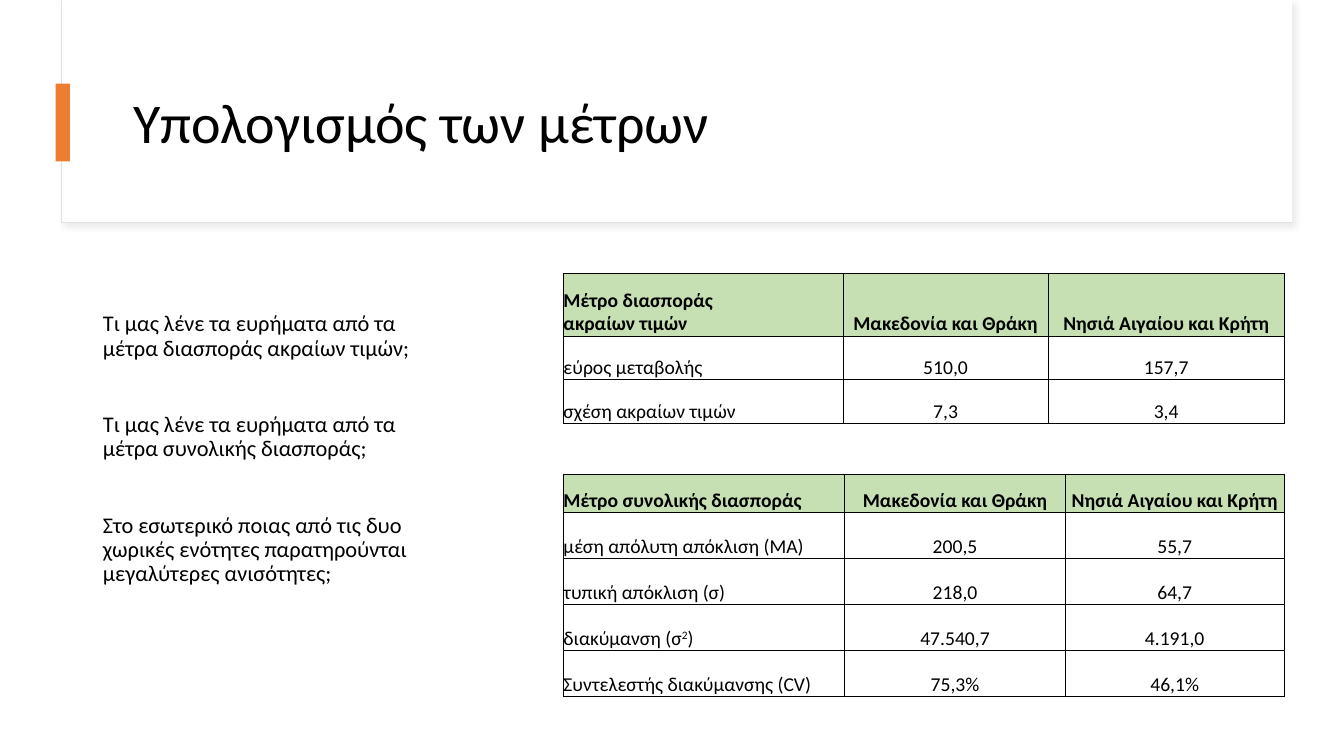
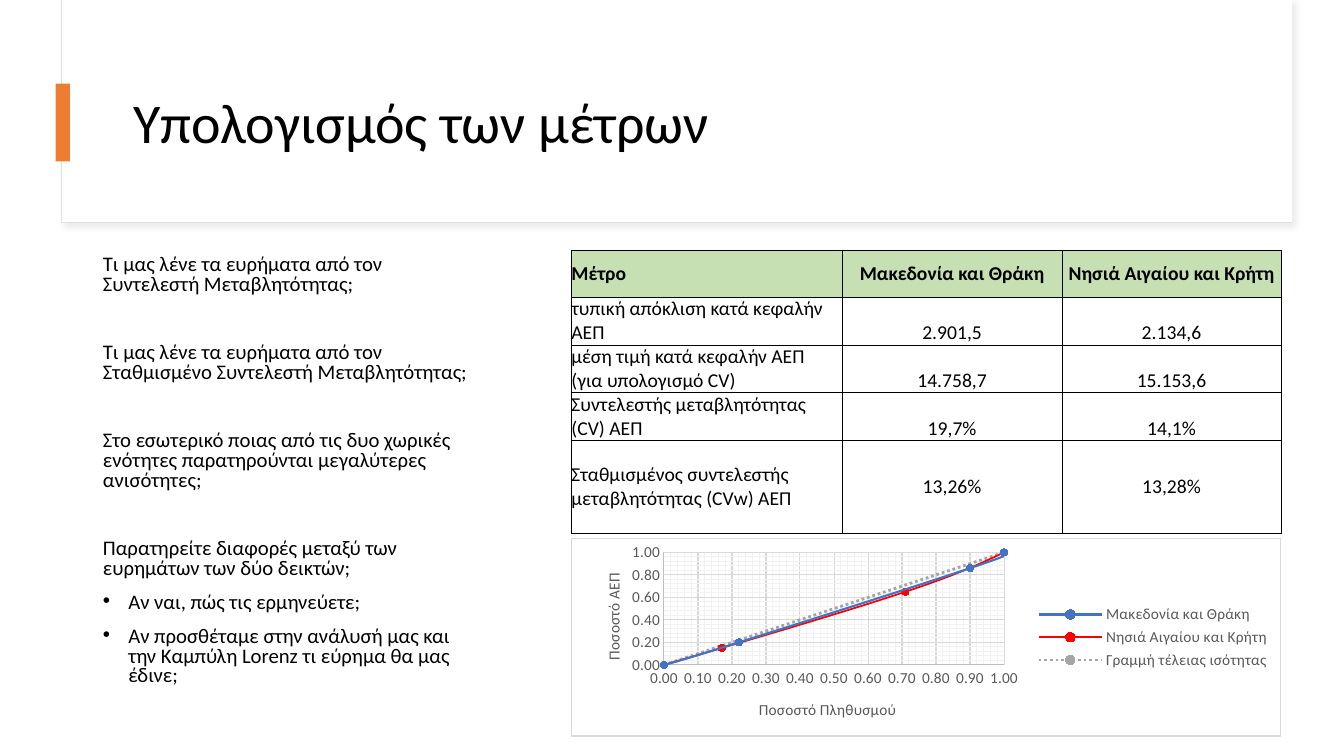
"""Build two slides on measures of dispersion."""
from pptx import Presentation
from pptx.chart.data import XyChartData
from pptx.dml.color import RGBColor
from pptx.enum.chart import (XL_CHART_TYPE, XL_LEGEND_POSITION,
                             XL_MARKER_STYLE, XL_TICK_MARK)
from pptx.enum.dml import MSO_LINE
from pptx.enum.shapes import MSO_SHAPE
from pptx.enum.text import MSO_ANCHOR, MSO_AUTO_SIZE, PP_ALIGN
from pptx.oxml import parse_xml
from pptx.oxml.ns import nsdecls, qn
from pptx.util import Cm, Pt

BLACK, WHITE, GREEN, ORANGE = "000000", "FFFFFF", "C6E0B4", "ED7D31"
GRAY, GRID, FAINT, EDGE = "595959", "D9D9D9", "F2F2F2", "BFBFBF"
NORTH, ISLES = "Μακεδονία και Θράκη", "Νησιά Αιγαίου και Κρήτη"


def hue(code):
    return RGBColor.from_string(code)


def xml(tag, inner, *names):
    head, rest = (tag.split(" ", 1) + [""])[:2]
    return parse_xml(f"<{head} {nsdecls(*names)} {rest}>{inner}</{head}>")


def paint(code):
    return f'<a:solidFill><a:srgbClr val="{code}"/></a:solidFill>'


def rule(code):
    return f'<a:ln w="{Pt(0.75)}">{paint(code)}</a:ln>'


def stroke(line, code, width, dash=None):
    line.color.rgb = hue(code)
    line.width = Pt(width)
    if dash:
        line.dash_style = dash


def place(node, spot, **parts):
    for old in node.findall(qn("c:layout")):
        node.remove(old)
    inner = "".join(f'<c:{k} val="{v}"/>' for k, v in parts.items())
    node.insert(spot, xml("c:layout", f"<c:manualLayout>{inner}</c:manualLayout>", "c"))


class Deck:
    """Hold the style and the current slide."""

    def __init__(self):
        self.file = Presentation()
        self.file.slide_width, self.file.slide_height = Cm(33.87), Cm(19.05)
        self.face = "Calibri"

    def font(self, font, size, code=BLACK, bold=False):
        font.name, font.size, font.bold = self.face, Pt(size), bold
        font.color.rgb = hue(code)

    def run(self, par, text, size, bold=False):
        run = par.add_run()
        run.text = text
        self.font(run.font, size, bold=bold)
        return run

    def box(self, area, fill, line=None):
        shape = self.slide.shapes.add_shape(MSO_SHAPE.RECTANGLE, *map(Cm, area))
        shape.shadow.inherit = False
        shape.fill.solid()
        shape.fill.fore_color.rgb = hue(fill)
        if line:
            stroke(shape.line, line, 0.75)
        else:
            shape.line.fill.background()
        return shape

    def shade(self, shape):
        tint = f'<a:srgbClr val="{GRID}"><a:alpha val="50000"/></a:srgbClr>'
        tag = f'a:outerShdw blurRad="{Pt(4)}" dist="{Pt(3)}" dir="2700000"'
        node = shape.element.spPr.find(qn("a:effectLst"))
        node.append(xml(tag, tint, "a"))

    def holder(self, shape, area, anchor):
        shape.left, shape.top, shape.width, shape.height = map(Cm, area)
        shape.element.getparent().append(shape.element)
        frame = shape.text_frame
        frame.word_wrap, frame.auto_size = True, MSO_AUTO_SIZE.NONE
        frame.vertical_anchor = anchor
        return frame

    def page(self, title):
        self.slide = self.file.slides.add_slide(self.file.slide_layouts[1])
        self.shade(self.box((1.55, 0, 31.01, 5.61), WHITE, "E1E1E1"))
        self.box((1.57, 0, 30.99, 5.59), WHITE)
        frame = self.holder(self.slide.shapes.title, (3.1, 1.52, 28.24, 3.28),
                            MSO_ANCHOR.MIDDLE)
        par = frame.paragraphs[0]
        par.alignment, par.line_spacing = PP_ALIGN.LEFT, 0.9
        self.run(par, title, 40)
        self.box((1.4, 2.11, 0.36, 1.96), ORANGE)

    def body(self, area, size, pitch, gap, asks, points=()):
        frame = self.holder(self.slide.placeholders[1], area, MSO_ANCHOR.TOP)
        for i, text in enumerate([*asks, *points]):
            par = frame.paragraphs[0] if i == 0 else frame.add_paragraph()
            point = i >= len(asks)
            par.line_spacing = pitch
            par.space_before = Pt(10 if point or i == 0 else gap)
            par.alignment = PP_ALIGN.LEFT
            self.run(par, text, size)
            props = par._p.get_or_add_pPr()
            props.set("marL", str(Cm(0.64) if point else 0))
            props.set("indent", str(Cm(-0.64) if point else 0))
            if point:
                props.append(xml('a:buFont typeface="Arial"', "", "a"))
                props.append(xml('a:buChar char="•"', "", "a"))
            else:
                props.append(xml("a:buNone", "", "a"))

    def cell(self, cell, text, head, first, anchor):
        cell.margin_left = cell.margin_right = 0
        cell.margin_top = cell.margin_bottom = 0
        cell.vertical_anchor = anchor
        if head:
            cell.fill.solid()
            cell.fill.fore_color.rgb = hue(GREEN)
        else:
            cell.fill.background()
        for i, line in enumerate(text.split("\n")):
            frame = cell.text_frame
            par = frame.paragraphs[0] if i == 0 else frame.add_paragraph()
            par.alignment = PP_ALIGN.LEFT if first else PP_ALIGN.CENTER
            for k, part in enumerate(line.split("^")):
                run = self.run(par, part, 14, head)
                if k % 2:
                    run.font._element.set("baseline", "30000")
        props = cell._tc.get_or_add_tcPr()
        for i, side in enumerate("LRTB"):
            props.insert(i, xml(f'a:ln{side} w="{Pt(0.5)}"', paint(BLACK), "a"))

    def table(self, left, top, cols, rows, data, middle=lambda r, c: False):
        shape = self.slide.shapes.add_table(
            len(rows), len(cols), Cm(left), Cm(top), Cm(sum(cols)), Cm(sum(rows)))
        table = shape.table
        table.first_row = table.horz_banding = False
        for col, width in zip(table.columns, cols):
            col.width = Cm(width)
        for row, height in zip(table.rows, rows):
            row.height = Cm(height)
        for r, line in enumerate(data):
            for c, text in enumerate(line):
                anchor = MSO_ANCHOR.MIDDLE if middle(r, c) else MSO_ANCHOR.BOTTOM
                self.cell(table.cell(r, c), text, r == 0, c == 0, anchor)

    def axis(self, axis, title, step, x, y):
        axis.minimum_scale, axis.maximum_scale, axis.major_unit = 0, 1, step
        axis.major_tick_mark = axis.minor_tick_mark = XL_TICK_MARK.NONE
        axis.has_major_gridlines = axis.has_minor_gridlines = True
        stroke(axis.major_gridlines.format.line, GRID, 0.75)
        minor = axis._element.find(qn("c:minorGridlines"))
        minor.append(xml("c:spPr", rule(FAINT), "c", "a"))
        stroke(axis.format.line, EDGE, 0.75)
        labels = axis.tick_labels
        labels.number_format, labels.number_format_is_linked = "0.00", False
        self.font(labels.font, 11, GRAY)
        name = axis.axis_title
        run = name.text_frame.paragraphs[0].add_run()
        run.text = title
        self.font(run.font, 11, GRAY)
        place(name._element, 1, xMode="edge", yMode="edge", x=x, y=y)

    def chart(self, area, lines):
        data = XyChartData()
        for name, dots, *_ in lines:
            series = data.add_series(name)
            for x, y in dots:
                series.add_data_point(x, y)
        chart = self.slide.shapes.add_chart(
            XL_CHART_TYPE.XY_SCATTER_SMOOTH, *map(Cm, area), data).chart
        chart.has_title = False
        self.font(chart.font, 11)
        space = chart._chartSpace
        space.find(qn("c:txPr")).addprevious(
            xml("c:spPr", paint(WHITE) + rule(GRID), "c", "a"))
        place(space.find(qn("c:chart")).find(qn("c:plotArea")), 0,
              layoutTarget="inner", xMode="edge", yMode="edge",
              x=0.13, y=0.07, w=0.48, h=0.57)
        self.axis(chart.category_axis, "Ποσοστό Πληθυσμού", 0.1, 0.26, 0.8)
        self.axis(chart.value_axis, "Ποσοστό ΑΕΠ", 0.2, 0.04, 0.16)
        chart.has_legend = True
        chart.legend.position = XL_LEGEND_POSITION.RIGHT
        chart.legend.include_in_layout = False
        self.font(chart.legend.font, 11, GRAY)
        plot = chart.plots[0]
        plot.vary_by_categories = False
        for series, (_, _, code, width, dash) in zip(plot.series, lines):
            stroke(series.format.line, code, width, dash)
            mark = series.marker
            mark.style, mark.size = XL_MARKER_STYLE.CIRCLE, 5
            mark.format.fill.solid()
            mark.format.fill.fore_color.rgb = hue(code)
            stroke(mark.format.line, code, 0.75)
            series._element.find(qn("c:smooth")).set("val", "1")


def main():
    deck = Deck()
    title = "Υπολογισμός των μέτρων"
    deck.page(title)
    deck.table(14.2, 6.88, (7.04, 5.18, 5.94), (1.59, 1.1, 1.1), [
        ("Μέτρο διασποράς\nακραίων τιμών", NORTH, ISLES),
        ("εύρος μεταβολής", "510,0", "157,7"),
        ("σχέση ακραίων τιμών", "7,3", "3,4")])
    deck.table(14.2, 11.94, (7.09, 5.56, 5.51), [0.97] + [1.16] * 4, [
        ("Μέτρο συνολικής διασποράς", NORTH, ISLES),
        ("μέση απόλυτη απόκλιση (ΜΑ)", "200,5", "55,7"),
        ("τυπική απόκλιση (σ)", "218,0", "64,7"),
        ("διακύμανση (σ^2^)", "47.540,7", "4.191,0"),
        ("Συντελεστής διακύμανσης (CV)", "75,3%", "46,1%")])
    deck.body((2.34, 7.75, 8.74, 10.46), 16, 0.9, 37.5, [
        "Τι μας λένε τα ευρήματα από τα μέτρα διασποράς ακραίων τιμών;",
        "Τι μας λένε τα ευρήματα από τα μέτρα συνολικής διασποράς;",
        "Στο εσωτερικό ποιας από τις δυο χωρικές ενότητες παρατηρούνται "
        "μεγαλύτερες ανισότητες;"])

    deck.page(title)
    deck.body((2.34, 6.32, 9.75, 11.89), 14.8, 0.8, 34.4, [
        "Τι μας λένε τα ευρήματα από τον Συντελεστή Μεταβλητότητας;",
        "Τι μας λένε τα ευρήματα από τον Σταθμισμένο Συντελεστή Μεταβλητότητας;",
        "Στο εσωτερικό ποιας από τις δυο χωρικές ενότητες παρατηρούνται "
        "μεγαλύτερες ανισότητες;",
        "Παρατηρείτε διαφορές μεταξύ των ευρημάτων των δύο δεικτών;"], [
        "Αν ναι, πώς τις ερμηνεύετε;",
        "Αν προσθέταμε στην ανάλυσή μας και την Καμπύλη Lorenz τι εύρημα "
        "θα μας έδινε;"])
    deck.table(14.4, 6.32, (6.83, 5.53, 5.53), [1.17] * 4 + [2.34], [
        ("Μέτρο", NORTH, ISLES),
        ("τυπική απόκλιση κατά κεφαλήν ΑΕΠ", "2.901,5", "2.134,6"),
        ("μέση τιμή κατά κεφαλήν ΑΕΠ\n(για υπολογισμό CV)", "14.758,7", "15.153,6"),
        ("Συντελεστής μεταβλητότητας (CV) ΑΕΠ", "19,7%", "14,1%"),
        ("Σταθμισμένος συντελεστής μεταβλητότητας (CVw) ΑΕΠ", "13,26%", "13,28%")],
        lambda r, c: c == 0 or r in (0, 4))
    deck.chart((14.4, 13.56, 17.88, 5), [
        (NORTH, [(0, 0), (0.22, 0.2), (0.9, 0.86), (1, 1)], "4472C4", 1.5, None),
        (ISLES, [(0, 0), (0.17, 0.15), (0.71, 0.65), (1, 1)], "FF0000", 1.25, None),
        ("Γραμμή τέλειας ισότητας", [(0, 0), (1, 1)], "A5A5A5", 2,
         MSO_LINE.ROUND_DOT)])
    deck.file.save("out.pptx")


if __name__ == "__main__":
    main()
